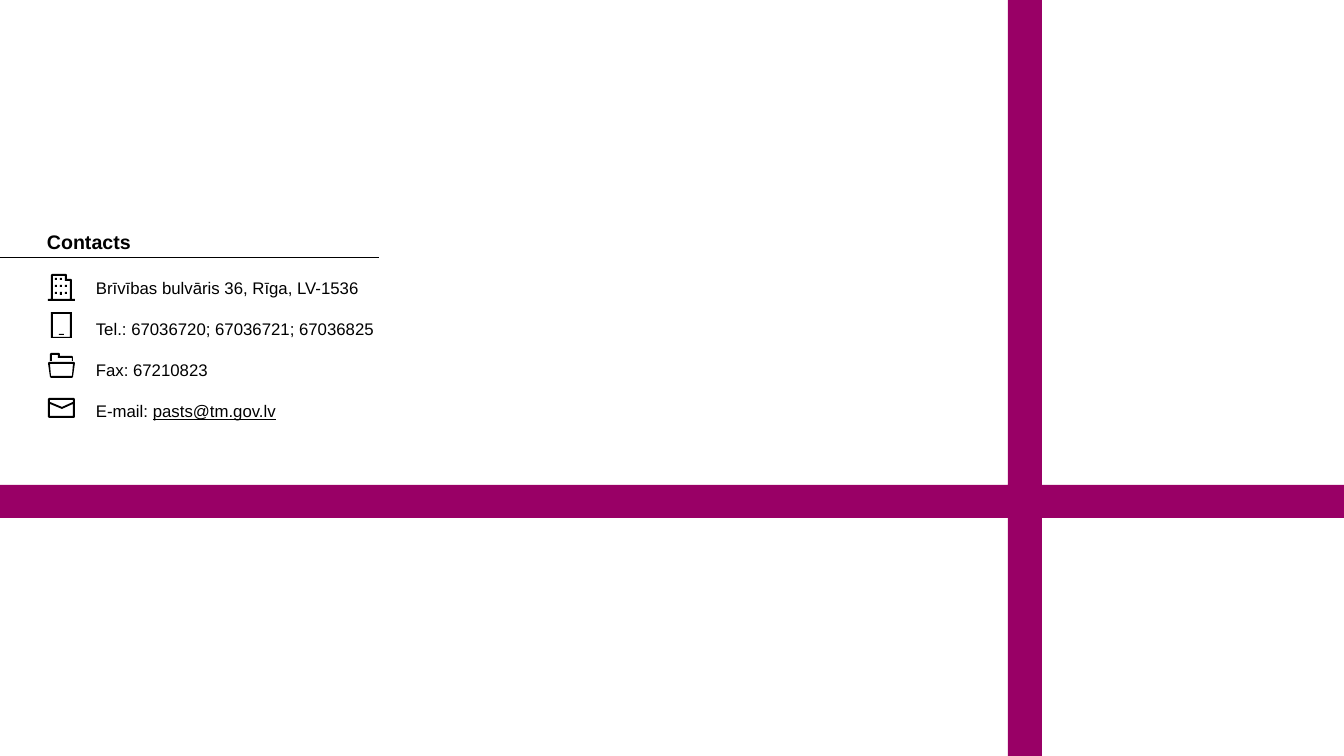
from lxml.etree import SubElement
from pptx import Presentation
from pptx.dml.color import RGBColor
from pptx.enum.shapes import MSO_CONNECTOR
from pptx.oxml.ns import qn
from pptx.util import Emu, Pt

WIDTH, HEIGHT = 1344, 756
PX = 12192000 / WIDTH
BLACK = RGBColor(0x00, 0x00, 0x00)
MAGENTA = RGBColor(0x99, 0x00, 0x66)

prs = Presentation()
prs.slide_width, prs.slide_height = Emu(round(WIDTH * PX)), Emu(round(HEIGHT * PX))
slide = prs.slides.add_slide(prs.slide_layouts[6])
shapes = slide.shapes


def fill_contours(contours, color):
    """Draw one filled freeform; a contour inside another cuts a hole."""
    builder = shapes.build_freeform(*contours[0][0], scale=PX)
    for index, contour in enumerate(contours):
        if index:
            builder.move_to(*contour[0])
        builder.add_line_segments(contour[1:], close=True)
    outline = builder.convert_to_shape()
    outline.shadow.inherit = False
    outline.fill.solid()
    outline.fill.fore_color.rgb = color
    outline.line.fill.background()


def box(left, top, right, bottom, cut=0):
    """Corner points of a rectangle, with corners cut off if asked."""
    if not cut:
        return [(left, top), (right, top), (right, bottom), (left, bottom)]
    return [(left + cut, top), (right - cut, top), (right, top + cut),
            (right, bottom - cut), (right - cut, bottom), (left + cut, bottom),
            (left, bottom - cut), (left, top + cut)]


# Crossing bands
band_left, band_right, band_top, band_bottom = 1008, 1042, 485, 518
fill_contours([[
    (band_left, 0), (band_right, 0), (band_right, band_top), (WIDTH, band_top),
    (WIDTH, band_bottom), (band_right, band_bottom), (band_right, HEIGHT),
    (band_left, HEIGHT), (band_left, band_bottom), (0, band_bottom),
    (0, band_top), (band_left, band_top)]], MAGENTA)

# Contact details: plain part, underlined part, space before
details = [
    ("Brīvības bulvāris 36, Rīga, LV-1536", "", 17.3),
    ("Tel.: 67036720; 67036721; 67036825", "", 15),
    ("Fax: 67210823", "", 15),
    ("E-mail: ", "pasts@tm.gov.lv", 15),
]
contacts = shapes.add_textbox(*(Emu(round(n * PX)) for n in (37, 225, 362, 200))).text_frame
contacts.word_wrap = True
heading = contacts.paragraphs[0]
heading.text = "Contacts"
heading.font.size = Pt(14)
heading.font.bold = True
for plain, underlined, gap in details:
    detail = contacts.add_paragraph()
    properties = detail._p.get_or_add_pPr()
    properties.set("marL", "0")
    properties.set("indent", str(round(49 * PX)))
    detail.space_before = Pt(gap)
    detail.font.size = Pt(12)
    detail.add_run().text = plain
    if underlined:
        address = detail.add_run()
        address.text = underlined
        address.font.underline = True
for paragraph in contacts.paragraphs:
    paragraph.font.name = "Arial"
    paragraph.font.color.rgb = BLACK

# Rule under the heading
rule = shapes.add_connector(
    MSO_CONNECTOR.STRAIGHT, *(Emu(round(n * PX)) for n in (379, 257, 0, 257)))
rule.line.color.rgb = BLACK
rule.line.width = Pt(0.25)
SubElement(rule._element.spPr, qn("a:effectLst"))

# Envelope: outline, body opening, flap opening
envelope = [
    box(48, 398, 75, 418, cut=1),
    [(50, 404), (62, 409), (73, 404), (73, 416), (50, 416)],
    [(50, 400), (73, 400), (73, 402), (62, 407), (50, 402)],
]
# Folder: front, its opening, tab behind
folder = [
    [(49, 362), (74, 362), (75, 363), (73, 377), (72, 378), (51, 378), (50, 377), (48, 363)],
    [(50, 364), (73, 364), (72, 376), (51, 376)],
    [(50, 361), (50, 354), (51, 353), (59, 353), (60, 354), (60, 356), (72, 356),
     (73, 357), (73, 361), (72, 361), (72, 358), (58, 358), (58, 355), (52, 355), (52, 361)],
]
# Phone: case, screen, button
phone = [box(51, 312, 72, 338), box(53, 314, 70, 337), box(59, 334, 64, 335)]
# Building: walls on the ground line, inside, windows
windows = [
    box(left, top, left + 2, top + (3 if (left, top) == (60, 292) else 2))
    for left in (55, 60, 65) for top in (278, 285, 292) if (left, top) != (65, 278)]
building = [
    [(51, 299), (51, 275), (52, 274), (66, 274), (67, 275), (67, 279), (71, 279),
     (72, 280), (72, 299), (75, 299), (75, 301), (48, 301), (48, 299)],
    [(53, 299), (53, 276), (65, 276), (65, 281), (70, 281), (70, 299)],
    *windows,
]
for icon in (envelope, folder, phone, building):
    fill_contours(icon, BLACK)

prs.save("out.pptx")
